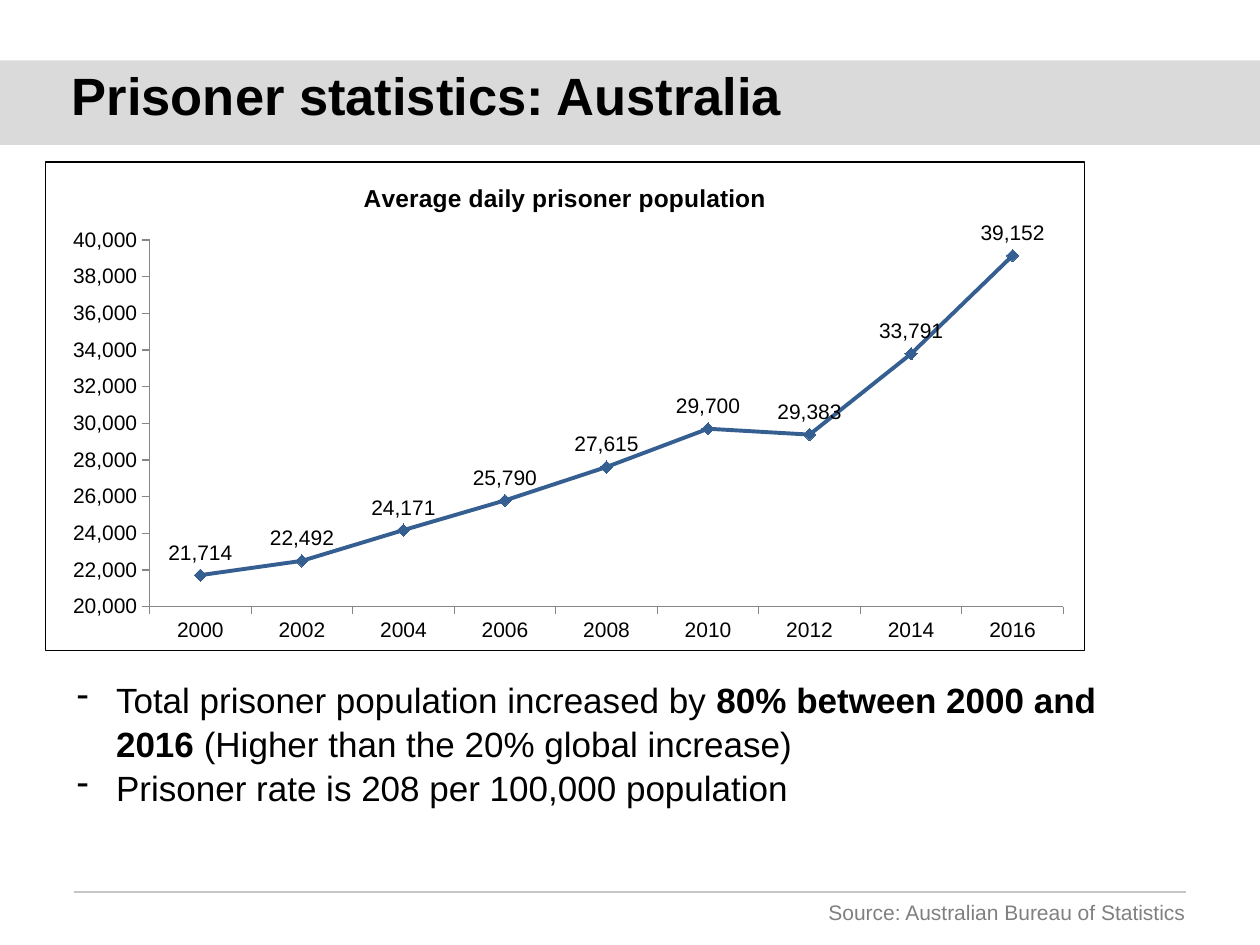
from lxml.etree import SubElement
from pptx import Presentation
from pptx.chart.data import CategoryChartData
from pptx.dml.color import RGBColor
from pptx.enum.chart import XL_CHART_TYPE, XL_LABEL_POSITION, XL_MARKER_STYLE, XL_TICK_MARK
from pptx.enum.shapes import MSO_CONNECTOR, MSO_SHAPE
from pptx.enum.text import PP_ALIGN
from pptx.oxml import parse_xml
from pptx.oxml.ns import nsdecls, qn
from pptx.util import Cm, Pt

POPULATION = {
    "2000": 21714, "2002": 22492, "2004": 24171, "2006": 25790, "2008": 27615,
    "2010": 29700, "2012": 29383, "2014": 33791, "2016": 39152,
}
FINDINGS = [
    [("Total prisoner population increased by ", False),
     ("80% between 2000 and 2016 ", True),
     ("(Higher than the 20% global increase)", False)],
    [("Prisoner rate is 208 per 100,000 population", False)],
]


def colour(hex_code):
    return RGBColor.from_string(hex_code)


def style_font(font, size, hex_code, bold=False):
    font.name = "Arial"
    font.size = Pt(size)
    font.bold = bold
    font.color.rgb = colour(hex_code)


def add_text(paragraph, text, size=20, hex_code="000000", bold=False):
    run = paragraph.add_run()
    run.text = text
    style_font(run.font, size, hex_code, bold)


def add_dash(paragraph, indent):
    """Give the paragraph a hanging dash."""
    properties = paragraph._p.get_or_add_pPr()
    properties.set("marL", str(indent))
    properties.set("indent", str(-indent))
    SubElement(properties, qn("a:buChar"), char="-")


def place_plot(chart, **fractions):
    """Fix the inner plot area as fractions of the chart's size."""
    area = chart._chartSpace.chart.plotArea
    for old in area.findall(qn("c:layout")):
        area.remove(old)
    layout = parse_xml(f"<c:layout {nsdecls('c')}/>")
    manual = SubElement(layout, qn("c:manualLayout"))
    SubElement(manual, qn("c:layoutTarget"), val="inner")
    for side in ("xMode", "yMode"):
        SubElement(manual, qn(f"c:{side}"), val="edge")
    for side, fraction in fractions.items():
        SubElement(manual, qn(f"c:{side}"), val=str(fraction))
    area.insert(0, layout)


def frame_chart(chart, hex_code):
    """Draw a thin border round the whole chart."""
    chart._chartSpace.chart.addnext(parse_xml(
        f'<c:spPr {nsdecls("c", "a")}><a:noFill/><a:ln w="{Pt(0.75)}"><a:solidFill>'
        f'<a:srgbClr val="{hex_code}"/></a:solidFill></a:ln></c:spPr>'))


class StatisticsSlide:
    ink = "000000"
    band_grey = "DADADA"
    rule_grey = "C6C6C6"
    source_grey = "808080"
    axis_grey = "868686"
    trend_blue = "365F91"

    def __init__(self, deck):
        self.slide = deck.slides.add_slide(deck.slide_layouts[6])
        self.shapes = self.slide.shapes

    def band(self, left, top, width, height):
        band = self.shapes.add_shape(MSO_SHAPE.RECTANGLE, left, top, width, height)
        band.shadow.inherit = False
        band.fill.solid()
        band.fill.fore_color.rgb = colour(self.band_grey)
        band.line.fill.background()

    def rule(self, left, right, y):
        rule = self.shapes.add_connector(MSO_CONNECTOR.STRAIGHT, left, y, right, y)
        rule.line.color.rgb = colour(self.rule_grey)
        rule.line.width = Pt(0.75)
        SubElement(rule._element.spPr, qn("a:effectLst"))

    def text_frame(self, left, top, width, height, inset=True):
        frame = self.shapes.add_textbox(left, top, width, height).text_frame
        frame.word_wrap = True
        if not inset:
            frame.margin_left = frame.margin_right = 0
            frame.margin_top = frame.margin_bottom = 0
        return frame

    def title(self, text, *place):
        heading = self.text_frame(*place, inset=False).paragraphs[0]
        heading.line_spacing = 0.9
        add_text(heading, text, size=30, hex_code=self.ink, bold=True)

    def source(self, text, *place):
        credit = self.text_frame(*place, inset=False).paragraphs[0]
        credit.alignment = PP_ALIGN.RIGHT
        add_text(credit, text, size=12, hex_code=self.source_grey)

    def dash_list(self, items, *place):
        frame = self.text_frame(*place)
        for index, pieces in enumerate(items):
            item = frame.add_paragraph() if index else frame.paragraphs[0]
            item.line_spacing = 1.05
            add_dash(item, Cm(0.79))
            for text, bold in pieces:
                add_text(item, text, hex_code=self.ink, bold=bold)

    def line_chart(self, heading, values, *place):
        data = CategoryChartData(number_format="#,##0")
        data.categories = list(values)
        data.add_series("Series 1", list(values.values()))
        chart = self.shapes.add_chart(XL_CHART_TYPE.LINE_MARKERS, *place, data).chart
        style_font(chart.font, 12, self.ink)
        frame_chart(chart, self.ink)
        place_plot(chart, x=0.1, y=0.16, w=0.88, h=0.75)
        chart.has_legend = False
        chart.has_title = True
        add_text(chart.chart_title.text_frame.paragraphs[0], heading,
                 size=14, hex_code=self.ink, bold=True)

        for axis in (chart.category_axis, chart.value_axis):
            axis.has_major_gridlines = False
            axis.major_tick_mark = XL_TICK_MARK.OUTSIDE
            axis.minor_tick_mark = XL_TICK_MARK.NONE
            axis.format.line.color.rgb = colour(self.axis_grey)
        scale = chart.value_axis
        scale.minimum_scale, scale.maximum_scale = 20000, 40000
        scale.major_unit = 2000
        scale.tick_labels.number_format = "#,##0"
        scale.tick_labels.number_format_is_linked = False

        plot = chart.plots[0]
        plot.vary_by_categories = False
        trend = plot.series[0]
        trend.smooth = False
        trend.format.line.color.rgb = colour(self.trend_blue)
        trend.format.line.width = Pt(2.25)
        trend.marker.style = XL_MARKER_STYLE.DIAMOND
        trend.marker.size = 7
        trend.marker.format.fill.solid()
        trend.marker.format.fill.fore_color.rgb = colour(self.trend_blue)
        trend.marker.format.line.color.rgb = colour(self.trend_blue)
        labels = trend.data_labels
        labels.show_value = True
        labels.position = XL_LABEL_POSITION.ABOVE
        labels.number_format = "#,##0"
        labels.number_format_is_linked = False
        style_font(labels.font, 12, self.ink)


def main():
    deck = Presentation()
    deck.slide_width, deck.slide_height = Cm(25.4), Cm(19.05)
    page = StatisticsSlide(deck)
    page.band(0, Cm(1.22), deck.slide_width, Cm(1.7))
    page.rule(Cm(1.5), Cm(23.9), Cm(17.98))
    page.source("Source: Australian Bureau of Statistics",
                Cm(4.44), Cm(18.14), Cm(19.46), Cm(0.71))
    page.line_chart("Average daily prisoner population", POPULATION,
                    Cm(0.91), Cm(3.25), Cm(20.96), Cm(9.88))
    page.title("Prisoner statistics: Australia",
               Cm(1.45), Cm(1.42), Cm(22.45), Cm(1.14))
    page.dash_list(FINDINGS, Cm(1.3), Cm(13.51), Cm(21.41), Cm(2.82))
    deck.save("out.pptx")


if __name__ == "__main__":
    main()
